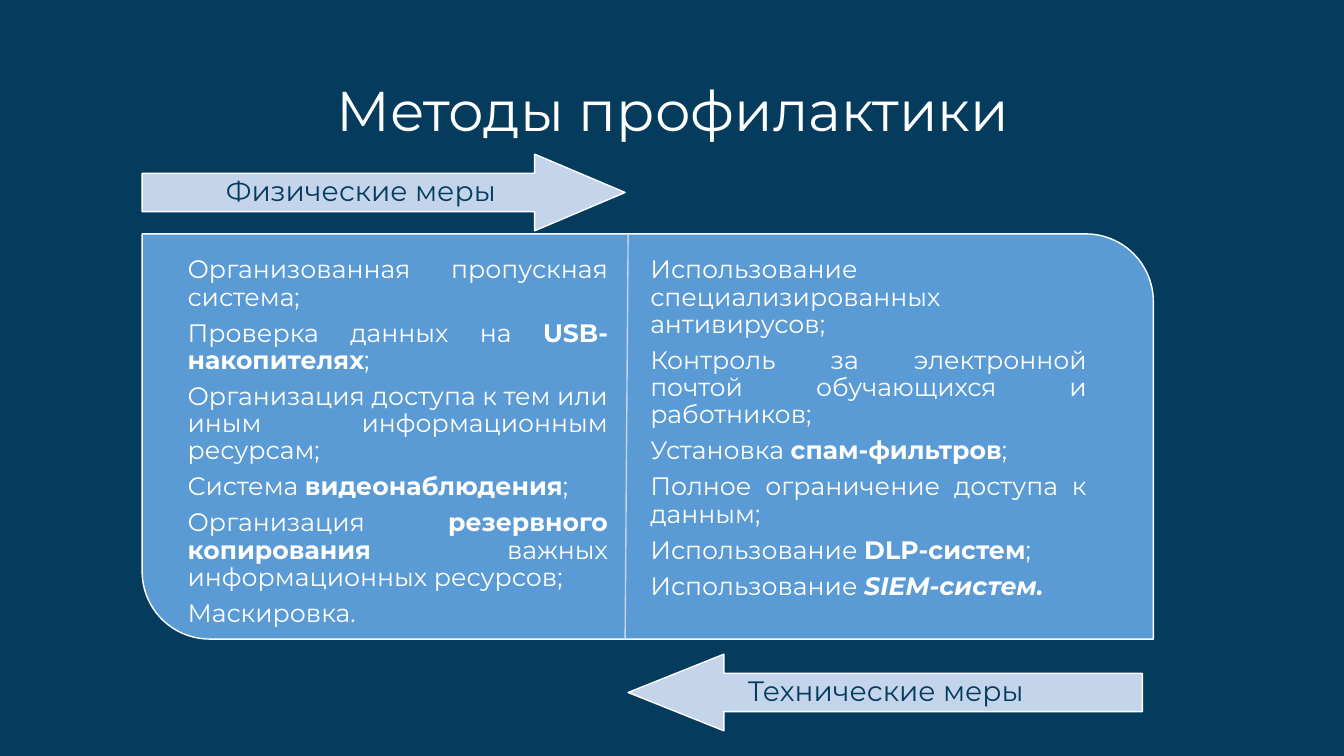
from pptx import Presentation
from pptx.dml.color import RGBColor
from pptx.enum.shapes import MSO_CONNECTOR as Link, MSO_SHAPE as Shape
from pptx.enum.text import MSO_ANCHOR as Anchor, PP_ALIGN as Align
from pptx.oxml.ns import qn
from pptx.util import Inches, Pt
from lxml import etree

NAVY = RGBColor(0x05, 0x3C, 0x5E)
BLUE = RGBColor(0x5B, 0x9B, 0xD5)
PALE = RGBColor(0xC4, 0xD5, 0xEB)
WHITE = RGBColor(0xFF, 0xFF, 0xFF)


def write(frame, paras, size=18, color=WHITE, align=Align.JUSTIFY,
          anchor=Anchor.TOP, pad=(0.07, 0.07, 0.07, 0.07), after=6.3):
    frame.word_wrap = True
    frame.vertical_anchor = anchor
    (frame.margin_left, frame.margin_top,
     frame.margin_right, frame.margin_bottom) = [Inches(p) for p in pad]
    for i, runs in enumerate(paras):
        para = frame.paragraphs[0] if i == 0 else frame.add_paragraph()
        para.alignment = align
        para.line_spacing = 0.9
        para.space_before = Pt(0)
        para.space_after = Pt(after)
        for text, style in runs:
            run = para.add_run()
            run.text = text
            font = run.font
            font.name = "Montserrat"
            font.size = Pt(size)
            font.color.rgb = color
            font.bold = "b" in style
            font.italic = "i" in style


def draw(kind, box, fill, adjust):
    shape = slide.shapes.add_shape(kind, *[Inches(v) for v in box])
    shape.shadow.inherit = False
    shape.fill.solid()
    shape.fill.fore_color.rgb = fill
    shape.line.color.rgb = WHITE
    shape.line.width = Pt(1)
    for i, value in enumerate(adjust):
        shape.adjustments[i] = value
    return shape


deck = Presentation()
deck.slide_width = Inches(13.33)
deck.slide_height = Inches(7.5)
slide = deck.slides.add_slide(deck.slide_layouts[5])
slide.background.fill.solid()
slide.background.fill.fore_color.rgb = NAVY

title = slide.shapes.title
title.left, title.top = Inches(0.92), Inches(0.4)
title.width, title.height = Inches(11.5), Inches(1.45)
write(title.text_frame, [[("Методы профилактики", "")]], size=40,
      align=Align.CENTER, anchor=Anchor.MIDDLE, pad=(0.1, 0.05, 0.1, 0.05), after=0)

draw(Shape.ROUND_2_DIAG_RECTANGLE, (1.41, 2.32, 10.03, 4.02), BLUE, (0, 0.167))

split = slide.shapes.add_connector(
    Link.STRAIGHT, Inches(6.23), Inches(2.32), Inches(6.2), Inches(6.33))
split.line.color.rgb = PALE
split.line.width = Pt(1)
etree.SubElement(split._element.spPr, qn("a:effectLst"))

physical = [
    [("Организованная пропускная система;", "")],
    [("Проверка данных на ", ""), ("USB-накопителях", "b"), (";", "")],
    [("Организация доступа к тем или иным информационным ресурсам;", "")],
    [("Система ", ""), ("видеонаблюдения", "b"), (";", "")],
    [("Организация ", ""), ("резервного копирования ", "b"),
     ("важных информационных ресурсов;", "")],
    [("Маскировка.", "")],
]
technical = [
    [("Использование специализированных антивирусов;", "")],
    [("Контроль за электронной почтой обучающихся и работников;", "")],
    [("Установка ", ""), ("спам-фильтров", "b"), (";", "")],
    [("Полное ограничение доступа к данным;", "")],
    [("Использование ", ""), ("DLP-систем", "b"), (";", "")],
    [("Использование ", ""), ("SIEM-систем.", "bi")],
]
for left, width, height, paras in [(1.79, 4.31, 3.53, physical),
                                   (6.38, 4.47, 4.17, technical)]:
    box = slide.shapes.add_textbox(
        Inches(left), Inches(2.48), Inches(width), Inches(height))
    write(box.text_frame, paras)

for kind, left, top, width, head, right, label in [
    (Shape.LEFT_ARROW, 6.23, 6.49, 5.1, 1.25, 0.46, "Технические меры"),
    (Shape.RIGHT_ARROW, 1.41, 1.53, 4.79, 1.18, 0, "Физические меры"),
]:
    arrow = draw(kind, (left, top, width, 0.76), PALE, (0.5, head))
    write(arrow.text_frame, [[(label, "")]], size=20, color=NAVY,
          align=Align.CENTER, anchor=Anchor.MIDDLE, pad=(0, 0, right, 0), after=0)

deck.save("out.pptx")
